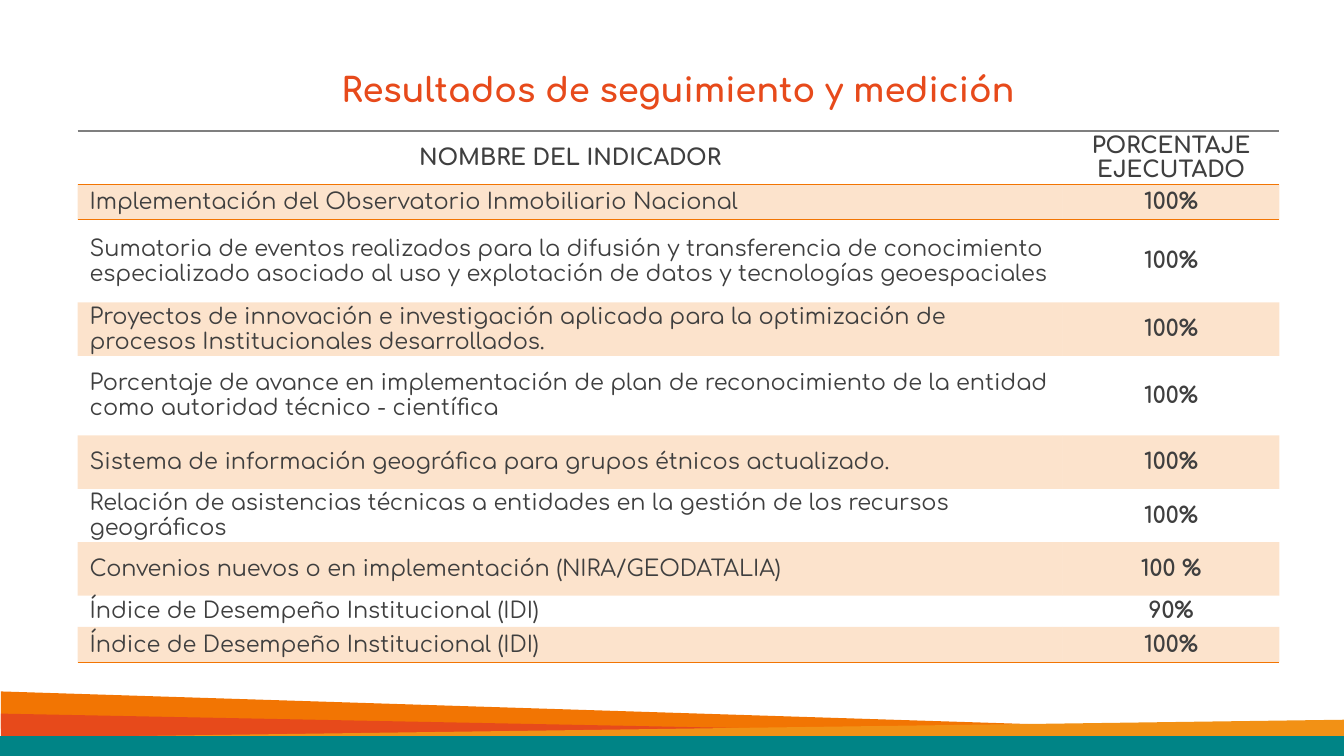
from dataclasses import dataclass

from lxml.etree import SubElement
from pptx import Presentation
from pptx.dml.color import RGBColor
from pptx.enum.text import MSO_ANCHOR, PP_ALIGN
from pptx.oxml import parse_xml
from pptx.oxml.ns import nsdecls, qn
from pptx.util import Inches, Pt


@dataclass(frozen=True)
class Theme:
    font: str = "Comfortaa"
    title_size: int = 24
    table_size: int = 16
    text: str = "3F3F3F"
    red: str = "E74A1B"
    orange: str = "F27503"
    amber: str = "F29115"
    teal: str = "008486"
    gray: str = "7F7F7F"
    band_alpha: int = 20000


THEME = Theme()
NO_STYLE = "{2D5ABB26-0587-4C30-8999-92F81FD0307C}"

FOOTER_BANDS = [
    (THEME.orange, [(0.01, 7.23), (0.01, 6.86), (11.66, 7.23)]),
    (THEME.red, [(0.01, 7.34), (0.01, 7.08), (13.33, 7.34)]),
    (THEME.amber, [(13.33, 7.32), (13.33, 7.14), (0.01, 7.32)]),
    (THEME.teal, [(0, 7.3), (13.33, 7.3), (13.33, 7.5), (0, 7.5)]),
]

HEADER = ("NOMBRE DEL INDICADOR", "PORCENTAJE EJECUTADO")
INDICATORS = [
    ("Implementación del Observatorio Inmobiliario Nacional", "100%"),
    ("Sumatoria de eventos realizados para la difusión y transferencia de "
     "conocimiento especializado asociado al uso y explotación de datos y "
     "tecnologías geoespaciales", "100%"),
    ("Proyectos de innovación e investigación aplicada para la optimización de "
     "procesos Institucionales desarrollados.", "100%"),
    ("Porcentaje de avance en implementación de plan de reconocimiento de la "
     "entidad como autoridad técnico - científica", "100%"),
    ("Sistema de información geográfica para grupos étnicos actualizado.", "100%"),
    ("Relación de asistencias técnicas a entidades en la gestión de los "
     "recursos geográficos", "100%"),
    ("Convenios nuevos o en implementación (NIRA/GEODATALIA)", "100 %"),
    ("Índice de Desempeño Institucional (IDI)", "90%"),
    ("Índice de Desempeño Institucional (IDI)", "100%"),
]
COL_WIDTHS = [9.77, 2.15]
ROW_HEIGHTS = [0.53, 0.35, 0.82, 0.53, 0.79, 0.53, 0.53, 0.53, 0.31, 0.35]


def set_font(p, size, color, bold):
    p.font.name = THEME.font
    p.font.size = Pt(size)
    p.font.bold = bold
    p.font.color.rgb = RGBColor.from_string(color)


def add_band(slide, color, points):
    corners = [(Inches(x), Inches(y)) for x, y in points]
    builder = slide.shapes.build_freeform(*corners[0])
    builder.add_line_segments(corners[1:], close=True)
    sp = builder.convert_to_shape()
    sp.shadow.inherit = False
    sp.fill.solid()
    sp.fill.fore_color.rgb = RGBColor.from_string(color)
    sp.line.fill.background()


def set_title(slide, text):
    title = slide.shapes.title
    title.left, title.top = Inches(2.91), Inches(0.63)
    title.width, title.height = Inches(7.63), Inches(0.5)
    tf = title.text_frame
    tf.text = text
    tf.vertical_anchor = MSO_ANCHOR.MIDDLE
    p = tf.paragraphs[0]
    p.alignment = PP_ALIGN.CENTER
    p.line_spacing = 1.0
    set_font(p, THEME.title_size, THEME.red, True)


def set_borders(cell, borders):
    """Draw (tag, color) borders; they must precede the fill in the cell."""
    tc_pr = cell._tc.get_or_add_tcPr()
    for i, (tag, color) in enumerate(borders):
        tc_pr.insert(i, parse_xml(
            f'<a:{tag} {nsdecls("a")} w="12700"><a:solidFill>'
            f'<a:srgbClr val="{color}"/></a:solidFill></a:{tag}>'))


def fill_cell(cell, banded):
    if not banded:
        cell.fill.background()
        return
    cell.fill.solid()
    cell.fill.fore_color.rgb = RGBColor.from_string(THEME.orange)
    color = cell._tc.tcPr.find(".//" + qn("a:srgbClr"))
    SubElement(color, qn("a:alpha"), val=str(THEME.band_alpha))


def write_cell(cell, text, centered, bold):
    cell.text = text
    cell.vertical_anchor = MSO_ANCHOR.MIDDLE
    cell.margin_left = cell.margin_right = Inches(0.12)
    cell.margin_top, cell.margin_bottom = Inches(0.01), 0
    p = cell.text_frame.paragraphs[0]
    p.alignment = PP_ALIGN.CENTER if centered else PP_ALIGN.LEFT
    set_font(p, THEME.table_size, THEME.text, bold)


def add_indicator_table(slide):
    rows = [HEADER, *INDICATORS]
    last = len(rows) - 1
    frame = slide.shapes.add_table(
        len(rows), len(HEADER), Inches(0.77), Inches(1.3),
        Inches(sum(COL_WIDTHS)), Inches(sum(ROW_HEIGHTS)))
    table = frame.table
    table.first_row = table.horz_banding = False
    table._tbl.tblPr.find(qn("a:tableStyleId")).text = NO_STYLE
    for column, width in zip(table.columns, COL_WIDTHS):
        column.width = Inches(width)
    borders = {0: [("lnT", THEME.gray), ("lnB", THEME.orange)],
               1: [("lnT", THEME.orange)],
               last: [("lnB", THEME.orange)]}
    for r, (values, height) in enumerate(zip(rows, ROW_HEIGHTS)):
        table.rows[r].height = Inches(height)
        for c, text in enumerate(values):
            cell = table.cell(r, c)
            emphasized = r == 0 or c == 1
            write_cell(cell, text, emphasized, emphasized)
            fill_cell(cell, r % 2 == 1)
            set_borders(cell, borders.get(r, []))


def main():
    prs = Presentation()
    prs.slide_width, prs.slide_height = Inches(13.33), Inches(7.5)
    slide = prs.slides.add_slide(prs.slide_layouts[5])
    for color, points in FOOTER_BANDS:
        add_band(slide, color, points)
    set_title(slide, "Resultados de seguimiento y medición")
    add_indicator_table(slide)
    prs.save("out.pptx")


if __name__ == "__main__":
    main()
